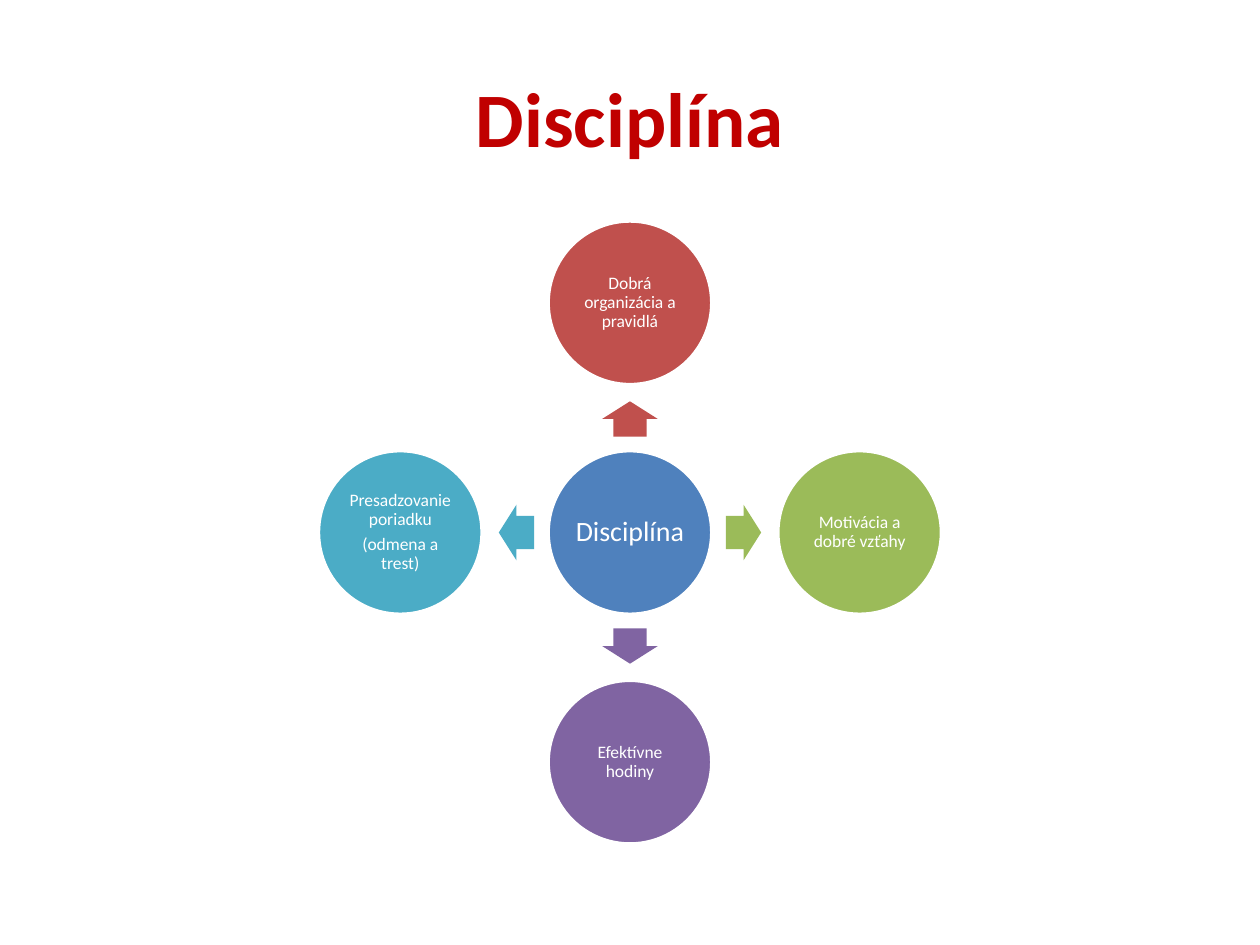
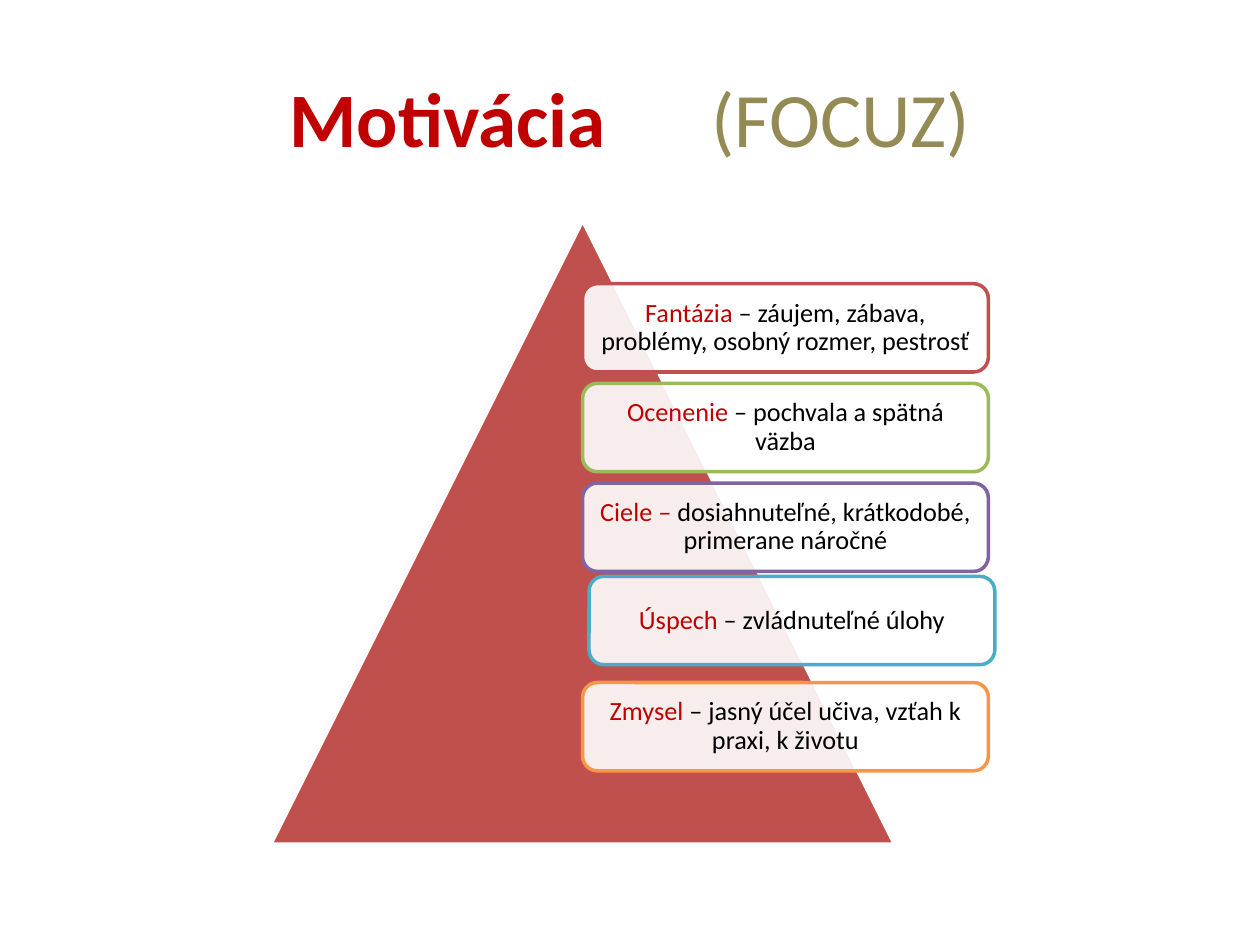
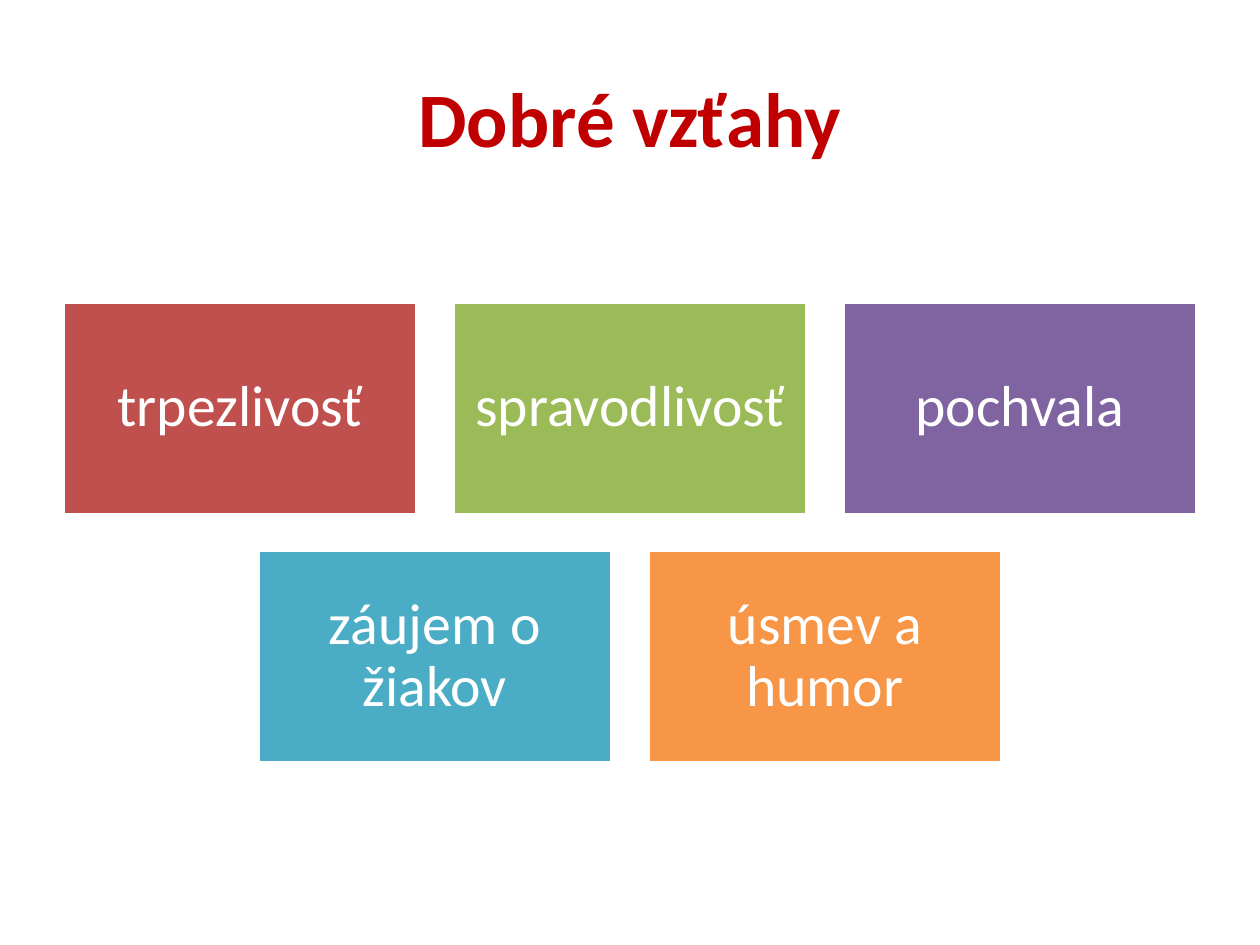
import collections

import pptx
import pptx.dml.color
import pptx.enum.shapes
import pptx.enum.text
import pptx.oxml.ns
import pptx.util
from lxml import etree

Cm = pptx.util.Cm
Pt = pptx.util.Pt
SHAPE = pptx.enum.shapes.MSO_SHAPE
Box = collections.namedtuple("Box", "left top width height")

FONT = "Calibri"
COLORS = {
    "title": "C00000", "olive": "948A54", "white": "FFFFFF", "black": "000000",
    "blue": "4F81BD", "red": "C0504D", "green": "9BBB59",
    "purple": "8064A2", "teal": "4BACC6", "orange": "F79646",
}
TITLE = Box(1.27, 0.76, 22.86, 3.18)
CONTENT = Box(1.27, 4.45, 22.86, 12.57)


def rgb(name):
    return pptx.dml.color.RGBColor.from_string(COLORS[name])


def set_font(font, size, color, bold=False):
    font.name = FONT
    font.size = Pt(size)
    font.bold = bold
    font.color.rgb = rgb(color)


def add_title_slide(prs, text):
    slide = prs.slides.add_slide(prs.slide_layouts[5])
    title = slide.shapes.title
    title.left, title.top, title.width, title.height = map(Cm, TITLE)
    tf = title.text_frame
    tf.vertical_anchor = pptx.enum.text.MSO_ANCHOR.MIDDLE
    p = tf.paragraphs[0]
    p.text = text
    p.alignment = pptx.enum.text.PP_ALIGN.CENTER
    set_font(p.font, 44, "title", True)
    return slide


def add_block(slide, kind, box, fill, line=None):
    sp = slide.shapes.add_shape(kind, *map(Cm, box))
    sp.shadow.inherit = False
    sp.fill.solid()
    sp.fill.fore_color.rgb = rgb(fill)
    if line:
        sp.line.color.rgb = rgb(line)
        sp.line.width = Pt(2)
    else:
        sp.line.fill.background()
    return sp


def set_text(sp, paragraphs, size, margin, color="white"):
    tf = sp.text_frame
    tf.word_wrap = True
    tf.vertical_anchor = pptx.enum.text.MSO_ANCHOR.MIDDLE
    tf.margin_left = tf.margin_right = tf.margin_top = tf.margin_bottom = Cm(margin)
    for i, text in enumerate(paragraphs):
        p = tf.add_paragraph() if i else tf.paragraphs[0]
        p.text = text
        p.alignment = pptx.enum.text.PP_ALIGN.CENTER
        p.line_spacing = 0.9
        p.space_after = Pt(0.35 * size)
        set_font(p.font, size, color)


def add_radial_diagram(slide, box, hub, spokes):
    """Put the hub circle mid-box; each spoke is (dx, dy, rotation, color, paragraphs)."""
    diameter, orbit, arrow_orbit = 3.3, 4.63, 2.29
    arrow_width, arrow_height = 0.71, 1.12
    cx, cy = box.left + box.width / 2, box.top + box.height / 2

    def centered(x, y, width, height):
        return Box(x - width / 2, y - height / 2, width, height)

    def add_circle(x, y, color, paragraphs, size, margin):
        sp = add_block(slide, SHAPE.OVAL, centered(x, y, diameter, diameter), color, "white")
        set_text(sp, paragraphs, size, margin)

    add_circle(cx, cy, "blue", [hub], 16, 0.05)
    for dx, dy, rotation, color, paragraphs in spokes:
        arrow = add_block(
            slide, SHAPE.RIGHT_ARROW,
            centered(cx + dx * arrow_orbit, cy + dy * arrow_orbit, arrow_width, arrow_height),
            color)
        arrow.adjustments[0], arrow.adjustments[1] = 0.6, 0.5
        arrow.rotation = rotation
        add_circle(cx + dx * orbit, cy + dy * orbit, color, paragraphs, 10, 0.03)


def set_opacity(sp, percent):
    color = sp.element.spPr.find(
        pptx.oxml.ns.qn("a:solidFill") + "/" + pptx.oxml.ns.qn("a:srgbClr"))
    etree.SubElement(color, pptx.oxml.ns.qn("a:alpha"), val=str(percent * 1000))


def add_pyramid_list(slide, box, cards):
    """Stack cards from the apex rightwards; each is (color, lead, rest, dx, dy)."""
    left = box.left + 4.19
    add_block(slide, SHAPE.ISOSCELES_TRIANGLE,
              Box(left, box.top, box.height, box.height), "red", "white")
    card_left, first_top, pitch = left + box.height / 2, box.top + 1.27, 2.01
    for i, (color, lead, rest, dx, dy) in enumerate(cards):
        card = add_block(slide, SHAPE.ROUNDED_RECTANGLE,
                         Box(card_left + dx, first_top + i * pitch + dy, 8.18, 1.78),
                         "white", color)
        set_opacity(card, 90)
        set_text(card, [lead], 15, 0.16, "title")
        r = card.text_frame.paragraphs[0].add_run()
        r.text = rest
        r.font.color.rgb = rgb("black")


def add_tile_rows(slide, box, rows):
    width, height, gap = 7.14, 4.29, 0.72
    top = box.top + (box.height - len(rows) * (height + gap) + gap) / 2
    for i, row in enumerate(rows):
        left = box.left + (box.width - len(row) * (width + gap) + gap) / 2
        for j, (color, text) in enumerate(row):
            tile = Box(left + j * (width + gap), top + i * (height + gap), width, height)
            set_text(add_block(slide, SHAPE.RECTANGLE, tile, color, "white"), [text], 33, 0.36)


def add_title_suffix(slide, text):
    """Append an olive suffix after one widely tracked space."""
    p = slide.shapes.title.text_frame.paragraphs[0]
    space = p.add_run()
    space.text = " "
    space.font.bold = True
    space.font.element.set("spc", "5000") if hasattr(space.font, "element") else \
        p.runs[-1]._r.get_or_add_rPr().set("spc", "5000")
    r = p.add_run()
    r.text = text
    set_font(r.font, 44, "olive")


def main():
    prs = pptx.Presentation()
    prs.slide_width, prs.slide_height = Cm(25.4), Cm(19.05)

    slide = add_title_slide(prs, "Disciplína")
    add_radial_diagram(slide, CONTENT, "Disciplína", [
        (0, -1, 270, "red", ["Dobrá organizácia a pravidlá"]),
        (1, 0, 0, "green", ["Motivácia a dobré vzťahy"]),
        (0, 1, 90, "purple", ["Efektívne hodiny"]),
        (-1, 0, 180, "teal", ["Presadzovanie poriadku", "(odmena a trest)"]),
    ])

    slide = add_title_slide(prs, "Motivácia")
    add_title_suffix(slide, "(FOCUZ)")
    add_pyramid_list(slide, CONTENT, [
        ("red", "Fantázia ", "– záujem, zábava, problémy, osobný rozmer, pestrosť", 0, 0),
        ("green", "Ocenenie ", "– pochvala a spätná väzba", 0, 0),
        ("purple", "Ciele –", " dosiahnuteľné, krátkodobé, primerane náročné", 0, 0),
        ("teal", "Úspech", " – zvládnuteľné úlohy", 0.13, -0.13),
        ("orange", "Zmysel", " – jasný účel učiva, vzťah k praxi, k životu", 0, 0),
    ])

    slide = add_title_slide(prs, "Dobré vzťahy")
    add_tile_rows(slide, CONTENT, [
        [("red", "trpezlivosť"), ("green", "spravodlivosť"), ("purple", "pochvala")],
        [("teal", "záujem o žiakov"), ("orange", "úsmev a humor")],
    ])

    prs.save("out.pptx")


if __name__ == "__main__":
    main()
